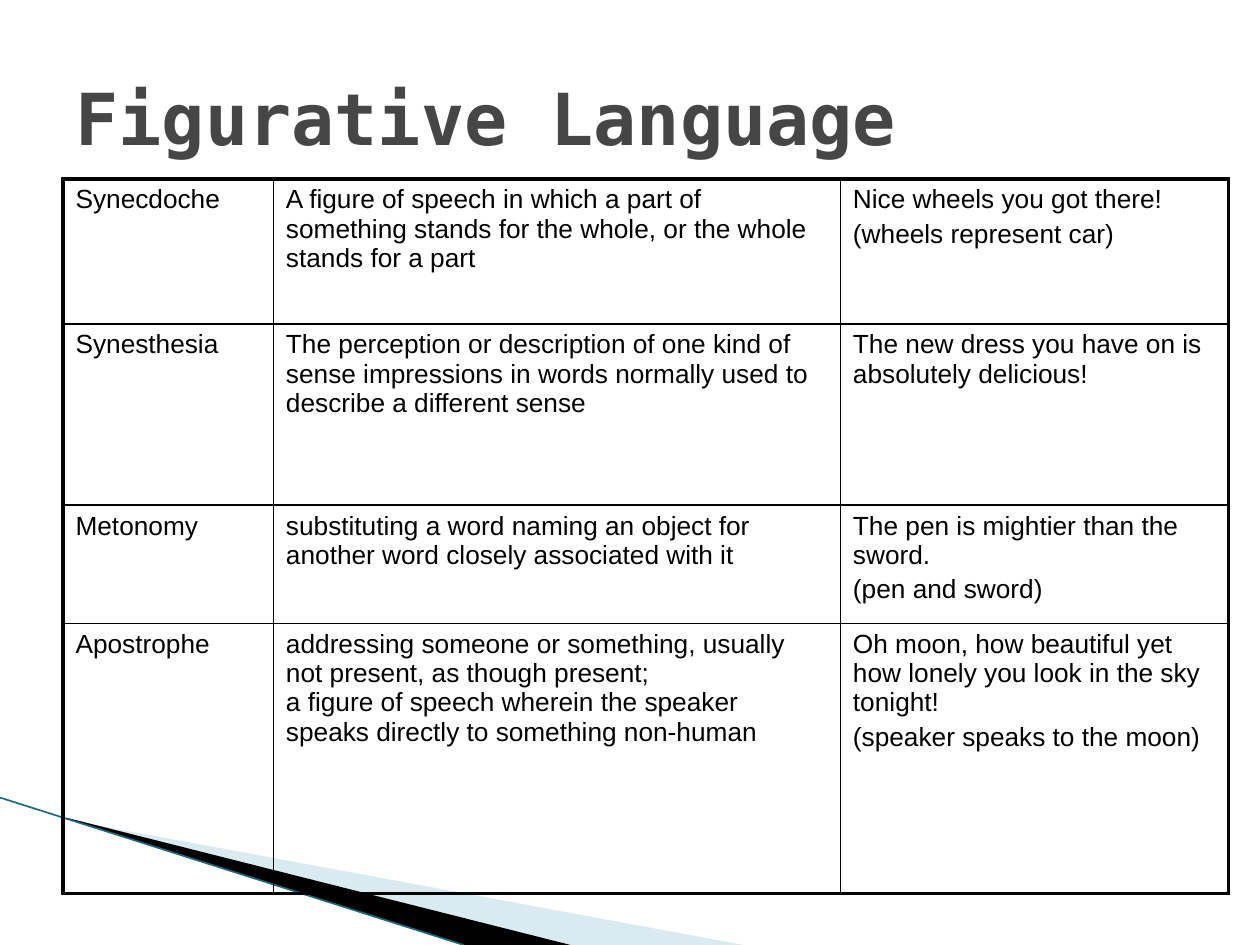
from typing import NamedTuple

from lxml import etree
from pptx import Presentation
from pptx.dml.color import RGBColor
from pptx.enum.shapes import MSO_CONNECTOR
from pptx.enum.text import MSO_ANCHOR, MSO_AUTO_SIZE, PP_ALIGN
from pptx.oxml.ns import qn
from pptx.util import Inches, Pt

LEFT = PP_ALIGN.LEFT
MIDDLE = MSO_ANCHOR.MIDDLE
NO_FIT = MSO_AUTO_SIZE.NONE
STRAIGHT = MSO_CONNECTOR.STRAIGHT

COLORS = {"text": "000000", "title": "464646", "pale": "A0CBDC",
          "band": "000000", "edge": "1B6B80"}
THICK, THIN = 2.25, 1
COLS = (1.67, 4.5, 3.08)


class Term(NamedTuple):
    name: str
    sense: str
    cases: tuple[str, ...]
    height: float


class Band(NamedTuple):
    color: str
    alpha: int
    points: tuple[tuple[float, float], ...]


TERMS = (
    Term("Synecdoche",
         "A figure of speech in which a part of something stands for the whole, "
         "or the whole stands for a part",
         ("Nice wheels you got there!", "(wheels represent car)"), 1.15),
    Term("Synesthesia",
         "The perception or description of one kind of sense impressions in "
         "words normally used to describe a different sense",
         ("The new dress you have on is absolutely delicious!",), 1.44),
    Term("Metonomy",
         "substituting a word naming an object for another word closely "
         "associated with it",
         ("The pen is mightier than the sword.", "(pen and sword)"), 0.94),
    Term("Apostrophe",
         "addressing someone or something, usually not present, as though present;\n"
         "a figure of speech wherein the speaker speaks directly to something non-human",
         ("Oh moon, how beautiful yet how lonely you look in the sky tonight!",
          "(speaker speaks to the moon)"), 2.14),
)
BANDS = (
    Band("pale", 40, ((0.55, 6.51), (5.9, 7.5), (4.53, 7.5), (0.55, 6.5))),
    Band("band", 100, ((0.53, 6.49), (4.53, 7.5), (3.68, 7.5), (0.54, 6.5))),
)


def rgb(key: str) -> RGBColor:
    return RGBColor.from_string(COLORS[key])


def draw_band(slide, band: Band) -> None:
    start, *rest = [(Inches(x), Inches(y)) for x, y in band.points]
    pen = slide.shapes.build_freeform(*start)
    pen.add_line_segments(rest, close=True)
    shape = pen.convert_to_shape()
    shape.shadow.inherit = False
    shape.line.fill.background()
    shape.fill.solid()
    shape.fill.fore_color.rgb = rgb(band.color)
    if band.alpha < 100:
        tint = shape._element.spPr.find(".//" + qn("a:srgbClr"))
        etree.SubElement(tint, qn("a:alpha"), val=str(band.alpha * 1000))


def draw_edge(slide) -> None:
    line = slide.shapes.add_connector(
        STRAIGHT, Inches(0), Inches(6.33), Inches(3.68), Inches(7.5))
    line.line.color.rgb = rgb("edge")
    line.line.width = Pt(0.95)
    etree.SubElement(line._element.spPr, qn("a:effectLst"))


def add_text(para, text: str, size: float, font: str, color: str,
             bold: bool = False) -> None:
    for i, part in enumerate(text.split("\n")):
        if i:
            para.add_line_break()
        run = para.add_run()
        run.text = part
        run.font.size = Pt(size)
        run.font.name = font
        run.font.bold = bold
        run.font.color.rgb = rgb(color)


def draw_title(slide) -> None:
    title = slide.shapes.title
    title.left, title.top = Inches(0.5), Inches(0.3)
    title.width, title.height = Inches(9), Inches(1.25)
    frame = title.text_frame
    frame.auto_size = NO_FIT
    frame.vertical_anchor = MIDDLE
    para = frame.paragraphs[0]
    para.alignment = LEFT
    add_text(para, "Figurative Language", 41, "DejaVu Sans Mono", "title", True)


def set_edges(cell, row: int, col: int) -> None:
    """Give the table's outer sides a thick line and all others a thin one."""
    outer = {"L": col == 0, "R": col == len(COLS) - 1,
             "T": row == 0, "B": row == len(TERMS) - 1}
    props = cell._tc.get_or_add_tcPr()
    for side, thick in outer.items():
        width = Pt(THICK if thick else THIN)
        line = etree.SubElement(props, qn(f"a:ln{side}"), w=str(width))
        fill = etree.SubElement(line, qn("a:solidFill"))
        etree.SubElement(fill, qn("a:srgbClr"), val=COLORS["text"])


def fill_cell(cell, paras: tuple[str, ...]) -> None:
    cell.fill.background()
    frame = cell.text_frame
    for i, text in enumerate(paras):
        para = frame.add_paragraph() if i else frame.paragraphs[0]
        if i:
            para.space_before = Pt(3)
        add_text(para, text, 15, "Arial", "text")


def draw_table(slide) -> None:
    high = sum(term.height for term in TERMS)
    table = slide.shapes.add_table(
        len(TERMS), len(COLS), Inches(0.5), Inches(1.42),
        Inches(sum(COLS)), Inches(high)).table
    table.first_row = table.horz_banding = False
    for col, width in zip(table.columns, COLS):
        col.width = Inches(width)
    for r, term in enumerate(TERMS):
        table.rows[r].height = Inches(term.height)
        for c, paras in enumerate(((term.name,), (term.sense,), term.cases)):
            cell = table.cell(r, c)
            set_edges(cell, r, c)
            fill_cell(cell, paras)


def main() -> None:
    deck = Presentation()
    deck.slide_width, deck.slide_height = Inches(10), Inches(7.5)
    slide = deck.slides.add_slide(deck.slide_layouts[5])
    for band in BANDS:
        draw_band(slide, band)
    draw_edge(slide)
    draw_title(slide)
    draw_table(slide)
    deck.save("out.pptx")


if __name__ == "__main__":
    main()
